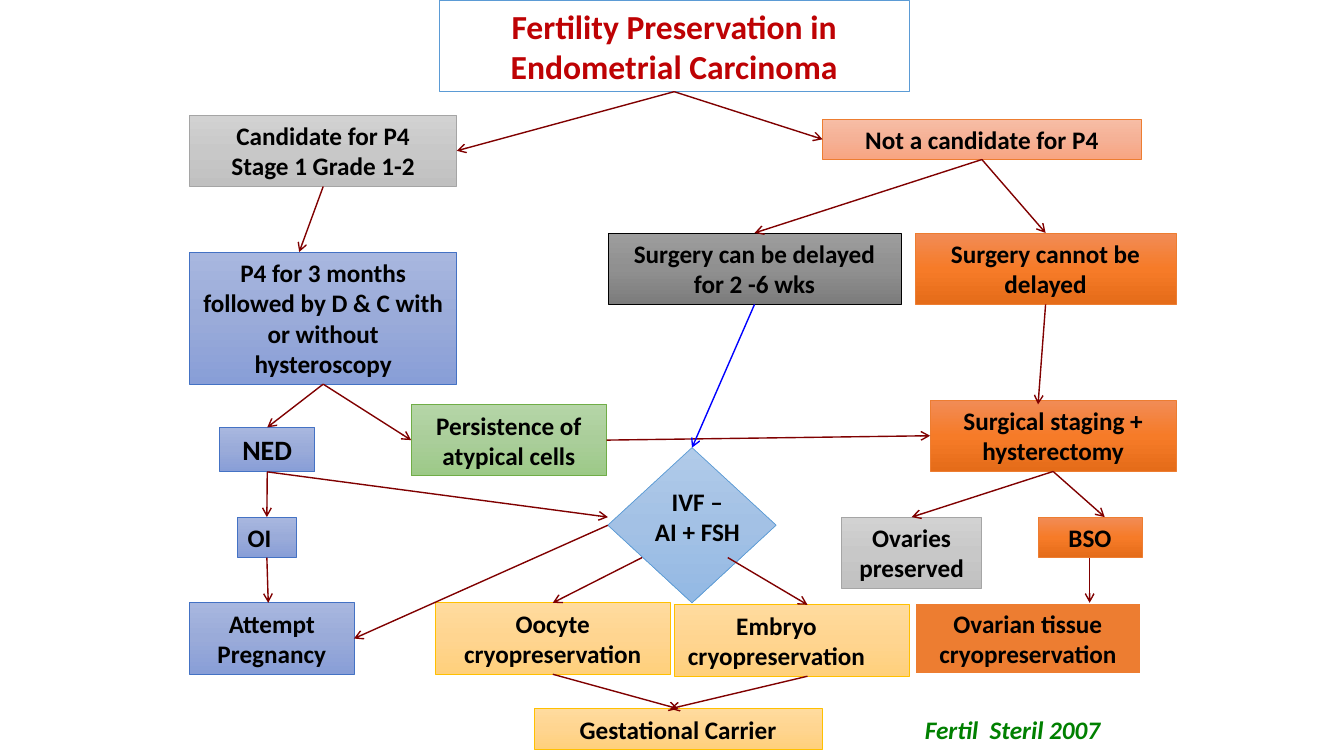
import copy
import pptx
import pptx.util
import pptx.dml.color
import pptx.enum.shapes
import pptx.enum.text
import pptx.oxml
import pptx.oxml.ns

Cm = pptx.util.Cm
Pt = pptx.util.Pt
RGBColor = pptx.dml.color.RGBColor
MSO_SHAPE = pptx.enum.shapes.MSO_SHAPE
PP_ALIGN = pptx.enum.text.PP_ALIGN

BLACK = RGBColor(0x00, 0x00, 0x00)
WHITE = RGBColor(0xFF, 0xFF, 0xFF)
TITLE_RED = RGBColor(0xBE, 0x02, 0x04)
MAROON = RGBColor(0x80, 0x00, 0x00)
BLUE = RGBColor(0x00, 0x00, 0xFF)
GREEN = RGBColor(0x00, 0x80, 0x00)
SKY_LINE = RGBColor(0x5B, 0x9B, 0xD5)
ORANGE_LINE = RGBColor(0xED, 0x7D, 0x31)

SALMON = [RGBColor(0xF7, 0xBD, 0xA5), RGBColor(0xF5, 0xB1, 0x96), RGBColor(0xF8, 0xA5, 0x82), ORANGE_LINE]
SILVER = [RGBColor(0xD2, 0xD2, 0xD2), RGBColor(0xC8, 0xC8, 0xC8), RGBColor(0xC0, 0xC0, 0xC0), RGBColor(0xA5, 0xA5, 0xA5)]
ORANGE = [RGBColor(0xF1, 0x8C, 0x57), RGBColor(0xF6, 0x7B, 0x28), RGBColor(0xE5, 0x6C, 0x19), ORANGE_LINE]
GREY = [RGBColor(0x9D, 0x9D, 0x9D), RGBColor(0x90, 0x90, 0x90), RGBColor(0x7C, 0x7C, 0x7C), BLACK]
PERIWINKLE = [RGBColor(0xA8, 0xB7, 0xDF), RGBColor(0x9A, 0xAB, 0xD9), RGBColor(0x88, 0x9E, 0xD7), RGBColor(0x44, 0x72, 0xC4)]
LEAF = [RGBColor(0xB5, 0xD5, 0xA7), RGBColor(0xAA, 0xCE, 0x9A), RGBColor(0x9C, 0xC9, 0x87), RGBColor(0x70, 0xAD, 0x47)]
SKY = [RGBColor(0xB1, 0xCB, 0xE9), RGBColor(0xA3, 0xC1, 0xE5), RGBColor(0x93, 0xB9, 0xE4), SKY_LINE]
GOLD = [RGBColor(0xFF, 0xDB, 0x9E), RGBColor(0xFF, 0xD5, 0x90), RGBColor(0xFF, 0xD0, 0x7C), RGBColor(0xFF, 0xC0, 0x00)]

TOP, LEFT, BOTTOM, RIGHT = range(4)
ONE_LINE, TWO_LINES = 1.02, 1.8


def write(holder, lines, size=18, color=BLACK, align=PP_ALIGN.CENTER, italic=None):
    frame = holder.text_frame
    frame.word_wrap = True
    frame.auto_size = pptx.enum.text.MSO_AUTO_SIZE.NONE
    frame.vertical_anchor = pptx.enum.text.MSO_ANCHOR.MIDDLE
    frame.margin_left = frame.margin_right = Cm(0.25)
    frame.margin_top = frame.margin_bottom = Cm(0.13)
    for index, line in enumerate(lines):
        paragraph = frame.add_paragraph() if index else frame.paragraphs[0]
        paragraph.alignment = align
        paragraph.line_spacing = 1.0
        run = paragraph.add_run()
        run.text = line
        run.font.name = "Calibri"
        run.font.size = Pt(size)
        run.font.bold = True
        run.font.italic = italic
        run.font.color.rgb = color


presentation = pptx.Presentation()
presentation.slide_width = Cm(33.87)
presentation.slide_height = Cm(19.05)
slide = presentation.slides.add_slide(presentation.slide_layouts[5])

title = slide.shapes.title
title.left, title.top, title.width, title.height = Cm(11.07), Cm(0), Cm(11.84), Cm(2.31)
title.line.color.rgb = SKY_LINE
title.line.width = Pt(0.5)
write(title, ["Fertility Preservation in Endometrial Carcinoma"], 24, TITLE_RED)

steps = {
    "not candidate": (20.73, 3, 8.03, ONE_LINE, SALMON, ["Not a candidate for P4"]),
    "candidate": (4.78, 2.9, 6.73, TWO_LINES, SILVER, ["Candidate for P4", "Stage 1 Grade 1-2"]),
    "no delay": (23.06, 5.87, 6.58, TWO_LINES, ORANGE, ["Surgery cannot be delayed"]),
    "delay": (15.32, 5.87, 7.39, TWO_LINES, GREY, ["Surgery can be delayed for 2 -6 wks"]),
    "staging": (23.44, 10.08, 6.2, TWO_LINES, ORANGE, ["Surgical staging + hysterectomy"]),
    "ovarian tissue": (23.06, 15.19, 5.69, TWO_LINES, None, ["Ovarian tissue cryopreservation"]),
    "BSO": (26.16, 13.03, 2.62, ONE_LINE, ORANGE, ["BSO"]),
    "ovaries": (21.21, 13.03, 3.53, TWO_LINES, SILVER, ["Ovaries preserved"]),
    "P4": (4.78, 6.35, 6.73, 3.33, PERIWINKLE,
           ["P4 for 3 months followed by D & C with or without hysteroscopy"]),
    "NED": (5.54, 10.77, 2.39, 1.12, PERIWINKLE, ["NED"]),
    "persistence": (10.36, 10.19, 4.93, TWO_LINES, LEAF, ["Persistence of atypical cells"]),
    "OI": (5.99, 13.03, 1.47, ONE_LINE, PERIWINKLE, ["OI"]),
    "pregnancy": (4.78, 15.19, 4.14, TWO_LINES, PERIWINKLE, ["Attempt Pregnancy"]),
    "IVF": (15.32, 11.28, 4.24, 3.91, SKY, []),
    "oocyte": (10.97, 15.19, 5.92, TWO_LINES, GOLD, ["Oocyte cryopreservation"]),
    "embryo": (16.99, 15.24, 5.92, TWO_LINES, GOLD, ["Embryo", "cryopreservation"]),
    "carrier": (13.46, 17.86, 7.26, ONE_LINE, GOLD, ["Gestational Carrier"]),
}
nodes = {"title": title}
for step, (left, top, width, height, palette, lines) in steps.items():
    outline = MSO_SHAPE.DIAMOND if step == "IVF" else MSO_SHAPE.RECTANGLE
    node = slide.shapes.add_shape(outline, Cm(left), Cm(top), Cm(width), Cm(height))
    node.shadow.inherit = False
    if palette:
        node.fill.gradient()
        node.fill.gradient_angle = 270
        stop_list = node.element.spPr.find(".//" + pptx.oxml.ns.qn("a:gsLst"))
        stop_list.insert(1, copy.deepcopy(stop_list[0]))
        for stop, position, shade in zip(node.fill.gradient_stops, (0, 0.5, 1), palette):
            stop.position = position
            stop.color.rgb = shade
    else:
        node.fill.solid()
        node.fill.fore_color.rgb = ORANGE_LINE
    node.line.color.rgb = palette[3] if palette else WHITE
    node.line.width = Pt(0.5 if palette else 1.5)
    write(node, lines, 20 if step == "NED" else 18,
          align=PP_ALIGN.LEFT if step == "OI" else PP_ALIGN.CENTER)
    nodes[step] = node

embryo_line = nodes["embryo"].text_frame.paragraphs[0]
embryo_line._p.get_or_add_pPr().set("marR", str(Cm(0.76)))

ivf_label = slide.shapes.add_textbox(Cm(15.62), Cm(12.12), Cm(3.91), Cm(TWO_LINES))
write(ivf_label, ["IVF –", "AI + FSH"])
citation = slide.shapes.add_textbox(Cm(23.06), Cm(17.86), Cm(7.06), Cm(ONE_LINE))
write(citation, ["Fertil  Steril 2007"], color=GREEN, align=PP_ALIGN.LEFT, italic=True)

arrows = [
    (("title", BOTTOM), ("candidate", RIGHT)),
    (("title", BOTTOM), ("not candidate", LEFT)),
    (("candidate", BOTTOM), (7.54, 6.35)),
    (("not candidate", BOTTOM), ("delay", TOP)),
    (("not candidate", BOTTOM), ("no delay", TOP)),
    (("P4", BOTTOM), ("NED", TOP)),
    (("P4", BOTTOM), ("persistence", LEFT)),
    (("NED", BOTTOM), ("OI", TOP)),
    (("NED", BOTTOM), (15.32, 13.03)),
    (("OI", BOTTOM), (6.76, 15.19)),
    (("IVF", LEFT), ("pregnancy", RIGHT)),
    (("persistence", RIGHT), ("staging", LEFT)),
    (("no delay", BOTTOM), (26.16, 10.19)),
    (("staging", BOTTOM), ("ovaries", TOP)),
    (("staging", BOTTOM), (27.84, 13.03)),
    ((27.46, 14.05), (27.46, 15.19)),
    ((16.18, 14.05), ("oocyte", TOP)),
    ((18.34, 14.05), (20.35, 15.24)),
    (("oocyte", BOTTOM), ("carrier", TOP)),
    ((20.35, 17.04), (16.89, 17.86)),
    (("delay", BOTTOM), ("IVF", TOP)),
]
for start, end in arrows:
    loose = [(0, 0) if isinstance(tip[0], str) else tip for tip in (start, end)]
    arrow = slide.shapes.add_connector(
        pptx.enum.shapes.MSO_CONNECTOR.STRAIGHT, *(Cm(value) for tip in loose for value in tip))
    for tip, attach in ((start, arrow.begin_connect), (end, arrow.end_connect)):
        if isinstance(tip[0], str):
            attach(nodes[tip[0]], tip[1])
    arrow.line.color.rgb = BLUE if start[0] == "delay" else MAROON
    arrow.line.width = Pt(1)
    arrow.line._get_or_add_ln().append(pptx.oxml.parse_xml(
        '<a:tailEnd %s type="arrow"/>' % pptx.oxml.ns.nsdecls("a")))
    arrow.element.spPr.append(pptx.oxml.parse_xml("<a:effectLst %s/>" % pptx.oxml.ns.nsdecls("a")))

presentation.save("out.pptx")
